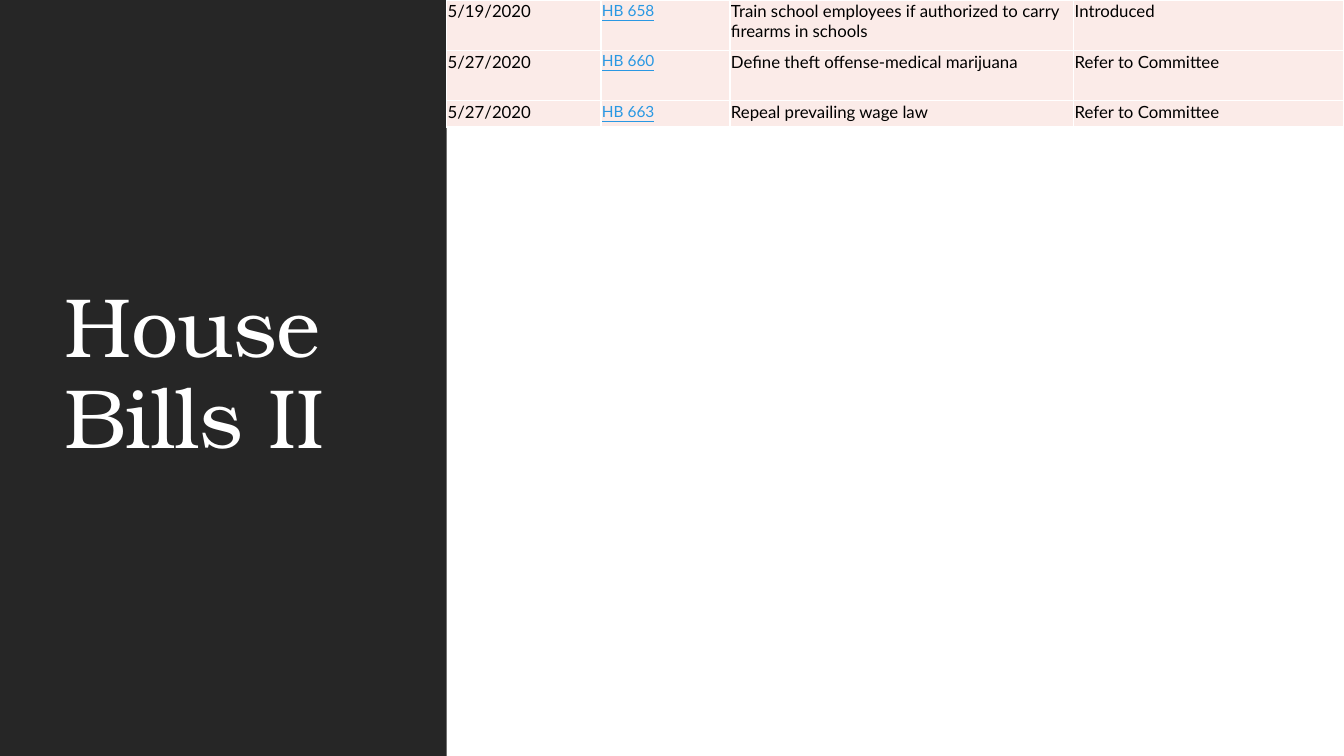
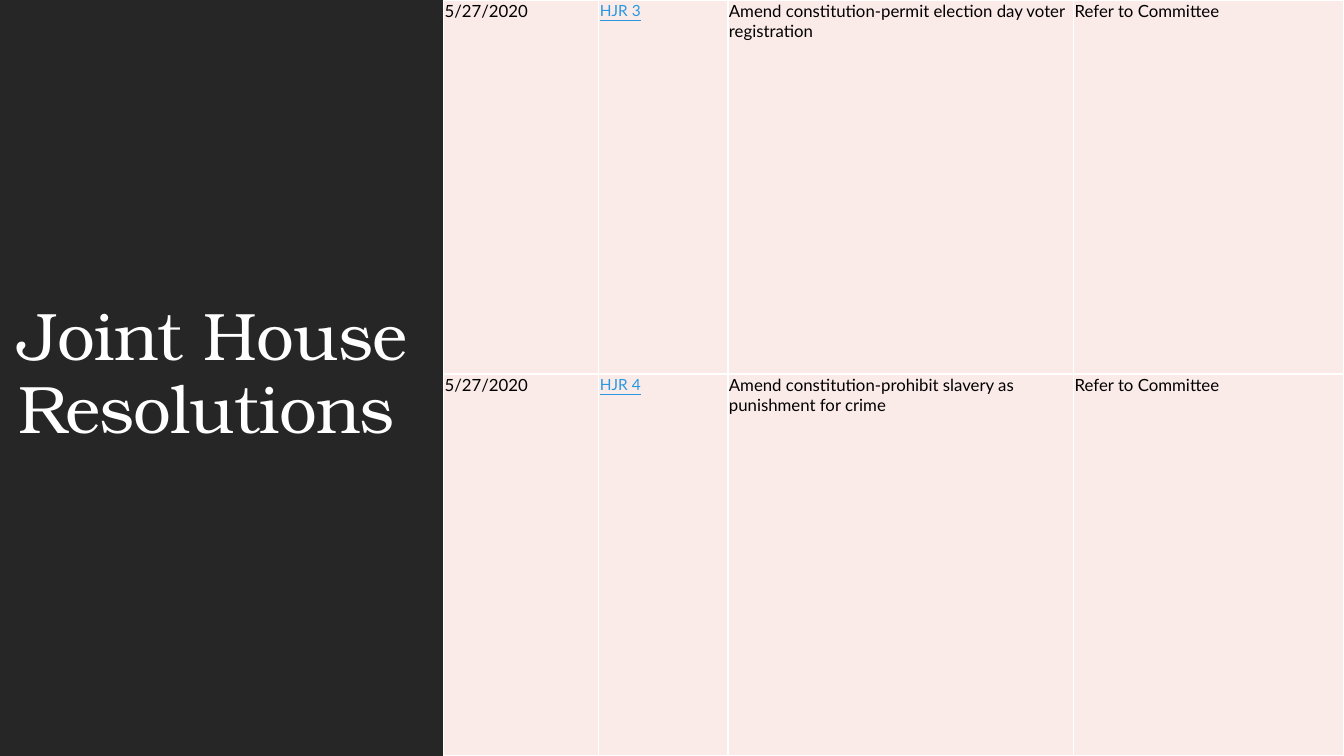
from lxml import etree
from pptx import Presentation
from pptx import util as u
from pptx.dml.color import RGBColor
from pptx.enum import shapes, text
from pptx.oxml import ns

PX = 9144  # EMU per px, 100 px to the inch
WIDTH, HEIGHT = 1333, 750
PANEL_WIDTH = 443

CHARCOAL = RGBColor(0x26, 0x26, 0x26)
WHITE = RGBColor(0xFF, 0xFF, 0xFF)
BLACK = RGBColor(0x00, 0x00, 0x00)
BLUSH = RGBColor(0xFB, 0xEB, 0xE8)
LINK_BLUE = RGBColor(0x29, 0x98, 0xE3)

TITLE_FONT = "TeX Gyre Bonum"
BODY_FONT = "Lato"
BILL_COLUMN = 1


def px(n):
    return u.Emu(n * PX)


class Deck:
    def __init__(self):
        self.prs = Presentation()
        self.prs.slide_width, self.prs.slide_height = px(WIDTH), px(HEIGHT)
        self.s = None

    def add_slide(self):
        """Start a title-only slide with the dark side panel behind its title."""
        self.s = self.prs.slides.add_slide(self.prs.slide_layouts[5])
        panel = self.s.shapes.add_shape(
            shapes.MSO_SHAPE.RECTANGLE, 0, 0, px(PANEL_WIDTH), px(HEIGHT))
        panel.shadow.inherit = False
        panel.fill.solid()
        panel.fill.fore_color.rgb = CHARCOAL
        panel.line.fill.background()
        self.s.shapes.title.element.addprevious(panel.element)

    def run(self, p, words, font, size, color, underline=False):
        r = p.add_run()
        r.text = words
        r.font.name, r.font.size = font, u.Pt(size)
        r.font.color.rgb = color
        if underline:
            r.font.underline = True
        return r

    def title(self, lines, left, width, size):
        sp = self.s.shapes.title
        sp.left, sp.top, sp.width, sp.height = map(px, (left, 57, width, 631))
        tf = sp.text_frame
        tf.word_wrap = True
        tf.auto_size = text.MSO_AUTO_SIZE.NONE
        tf.vertical_anchor = text.MSO_ANCHOR.MIDDLE
        p = tf.paragraphs[0]
        p.alignment = text.PP_ALIGN.LEFT
        p.line_spacing = 0.9
        for i, line in enumerate(lines):
            if i:
                p.add_line_break()
            r = self.run(p, line, TITLE_FONT, size, WHITE)
            r.font._element.set("spc", "-50")

    def borders(self, cell):
        tc_pr = cell._tc.get_or_add_tcPr()
        for side in ("lnL", "lnR", "lnT", "lnB"):
            ln = etree.SubElement(tc_pr, ns.qn(f"a:{side}"), w=str(u.Pt(1)))
            fill = etree.SubElement(ln, ns.qn("a:solidFill"))
            etree.SubElement(fill, ns.qn("a:srgbClr"), val=str(WHITE))

    def cell(self, cell, words, is_bill):
        cell.margin_left = cell.margin_right = cell.margin_top = px(1)
        cell.margin_bottom = 0
        self.borders(cell)
        cell.fill.solid()
        cell.fill.fore_color.rgb = BLUSH
        size, color = (11, LINK_BLUE) if is_bill else (12, BLACK)
        self.run(cell.text_frame.paragraphs[0], words, BODY_FONT, size, color, is_bill)

    def table(self, left, widths, heights, rows):
        table = self.s.shapes.add_table(
            len(rows), len(widths), px(left), 0,
            px(sum(widths)), px(sum(heights))).table
        table.first_row = table.horz_banding = False
        for column, width in zip(table.columns, widths):
            column.width = px(width)
        for row, height, words in zip(table.rows, heights, rows):
            row.height = px(height)
            for i, (cell, value) in enumerate(zip(row.cells, words)):
                self.cell(cell, value, i == BILL_COLUMN)


def main():
    deck = Deck()

    deck.add_slide()
    deck.title(("House", "Bills II"), 54, 337, 60)
    deck.table(443, (153, 128, 341, 268), (50, 50, 26), (
        ("5/19/2020", "HB 658",
         "Train school employees if authorized to carry firearms in schools",
         "Introduced"),
        ("5/27/2020", "HB 660", "Define theft offense-medical marijuana",
         "Refer to Committee"),
        ("5/27/2020", "HB 663", "Repeal prevailing wage law",
         "Refer to Committee"),
    ))

    deck.add_slide()
    deck.title(("Joint House", "Resolutions"), 8, 425, 48)
    deck.table(440, (154, 128, 343, 268), (371, 379), (
        ("5/27/2020", "HJR 3",
         "Amend constitution-permit election day voter registration",
         "Refer to Committee"),
        ("5/27/2020", "HJR 4",
         "Amend constitution-prohibit slavery as punishment for crime",
         "Refer to Committee"),
    ))

    deck.prs.save("out.pptx")


if __name__ == "__main__":
    main()
